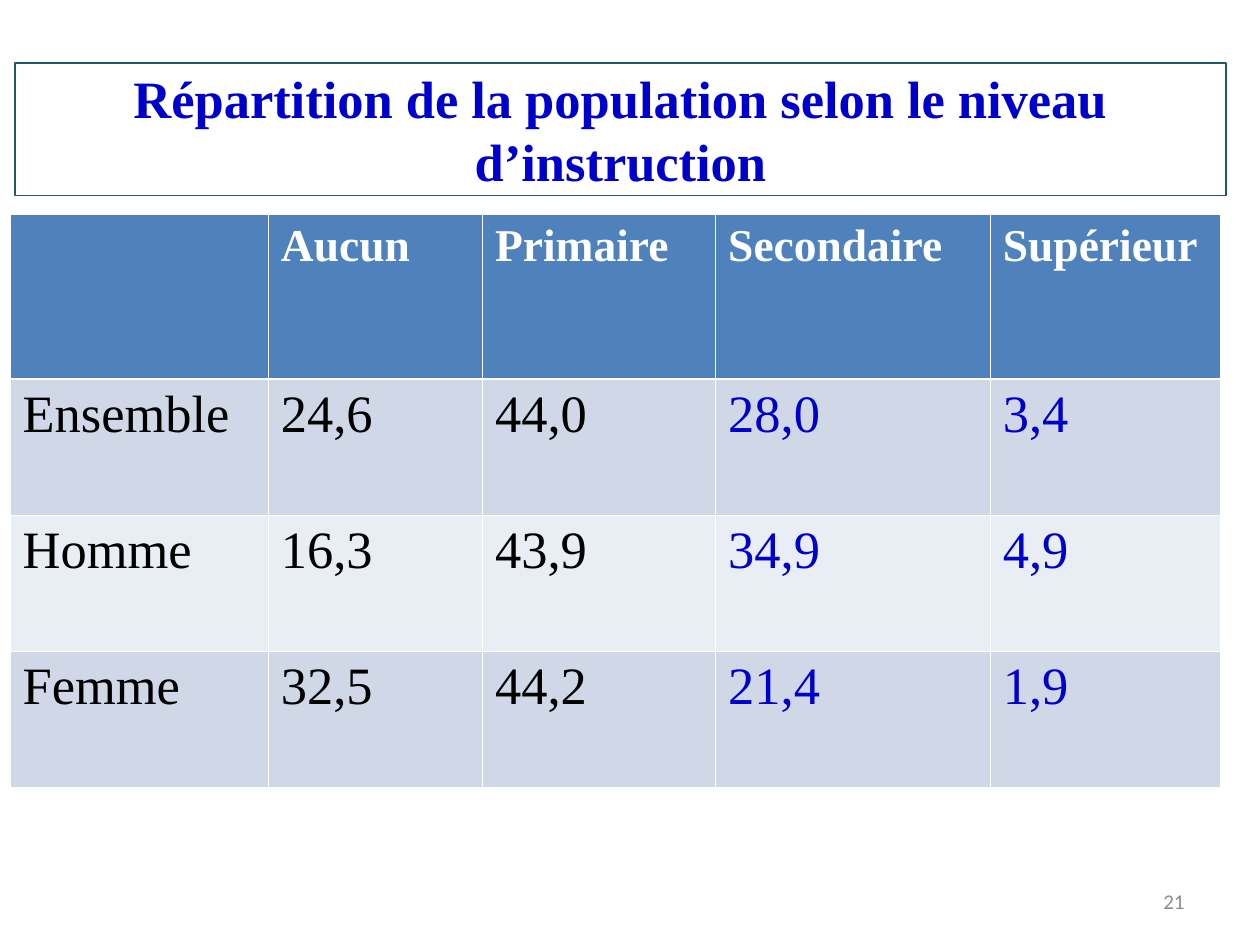
from pptx import Presentation
from pptx.dml.color import RGBColor
from pptx.enum.shapes import MSO_SHAPE
from pptx.enum.text import MSO_ANCHOR, PP_ALIGN
from pptx.util import Inches, Pt

WHITE = RGBColor(0xFF, 0xFF, 0xFF)
BLACK = RGBColor(0x00, 0x00, 0x00)
BLUE = RGBColor(0x00, 0x00, 0xCC)
GREY = RGBColor(0x8C, 0x8C, 0x8C)
TEAL = RGBColor(0x21, 0x59, 0x68)
HEADER = RGBColor(0x4F, 0x81, 0xBD)
BANDS = [RGBColor(0xE9, 0xED, 0xF4), RGBColor(0xD0, 0xD8, 0xE8)]
SERIF = "Times New Roman"

COLUMNS = [2.05, 1.7, 1.85, 2.18, 1.83]
HEADER_ROW, BODY_ROW = 1.31, 1.08
WIDTH = sum(COLUMNS)
ROWS = [
    ["", "Aucun", "Primaire", "Secondaire", "Supérieur"],
    ["Ensemble", "24,6", "44,0", "28,0", "3,4"],
    ["Homme", "16,3", "43,9", "34,9", "4,9"],
    ["Femme", "32,5", "44,2", "21,4", "1,9"],
]


def write(tf, text, size, color, font=SERIF, bold=False, align=PP_ALIGN.LEFT):
    tf.text = text
    p = tf.paragraphs[0]
    p.alignment = align
    for f in [p.font] + [r.font for r in p.runs]:
        f.name, f.size, f.bold = font, Pt(size), bold
        f.color.rgb = color


prs = Presentation()
prs.slide_width, prs.slide_height = Inches(10), Inches(7.5)
s = prs.slides.add_slide(prs.slide_layouts[6])

# Title frame
title = s.shapes.add_shape(MSO_SHAPE.RECTANGLE, Inches(0.12), Inches(0.5),
                           Inches(WIDTH), Inches(1.05))
title.shadow.inherit = False
title.fill.background()
title.line.color.rgb = TEAL
title.line.width = Pt(0.75)
title.text_frame.word_wrap = True
title.text_frame.vertical_anchor = MSO_ANCHOR.MIDDLE
write(title.text_frame, "Répartition de la population selon le niveau d’instruction",
      30, BLUE, bold=True, align=PP_ALIGN.CENTER)

# Education levels; the default table style supplies the white borders
height = HEADER_ROW + BODY_ROW * (len(ROWS) - 1)
table = s.shapes.add_table(len(ROWS), len(COLUMNS), Inches(0.08), Inches(1.7),
                           Inches(WIDTH), Inches(height)).table
for column, width in zip(table.columns, COLUMNS):
    column.width = Inches(width)
for i, row in enumerate(ROWS):
    is_header = i == 0
    table.rows[i].height = Inches(HEADER_ROW if is_header else BODY_ROW)
    for j, text in enumerate(row):
        cell = table.cell(i, j)
        cell.fill.solid()
        cell.fill.fore_color.rgb = HEADER if is_header else BANDS[i % 2]
        if is_header:
            write(cell.text_frame, text, 26, WHITE, bold=True)
        else:
            write(cell.text_frame, text, 30, BLUE if j >= 3 else BLACK)

# Slide number
number = s.shapes.add_textbox(Inches(7.17), Inches(6.95), Inches(2.33), Inches(0.4))
number.text_frame.word_wrap = True
number.text_frame.vertical_anchor = MSO_ANCHOR.MIDDLE
write(number.text_frame, "21", 12, GREY, font="Calibri", align=PP_ALIGN.RIGHT)

prs.save("out.pptx")
